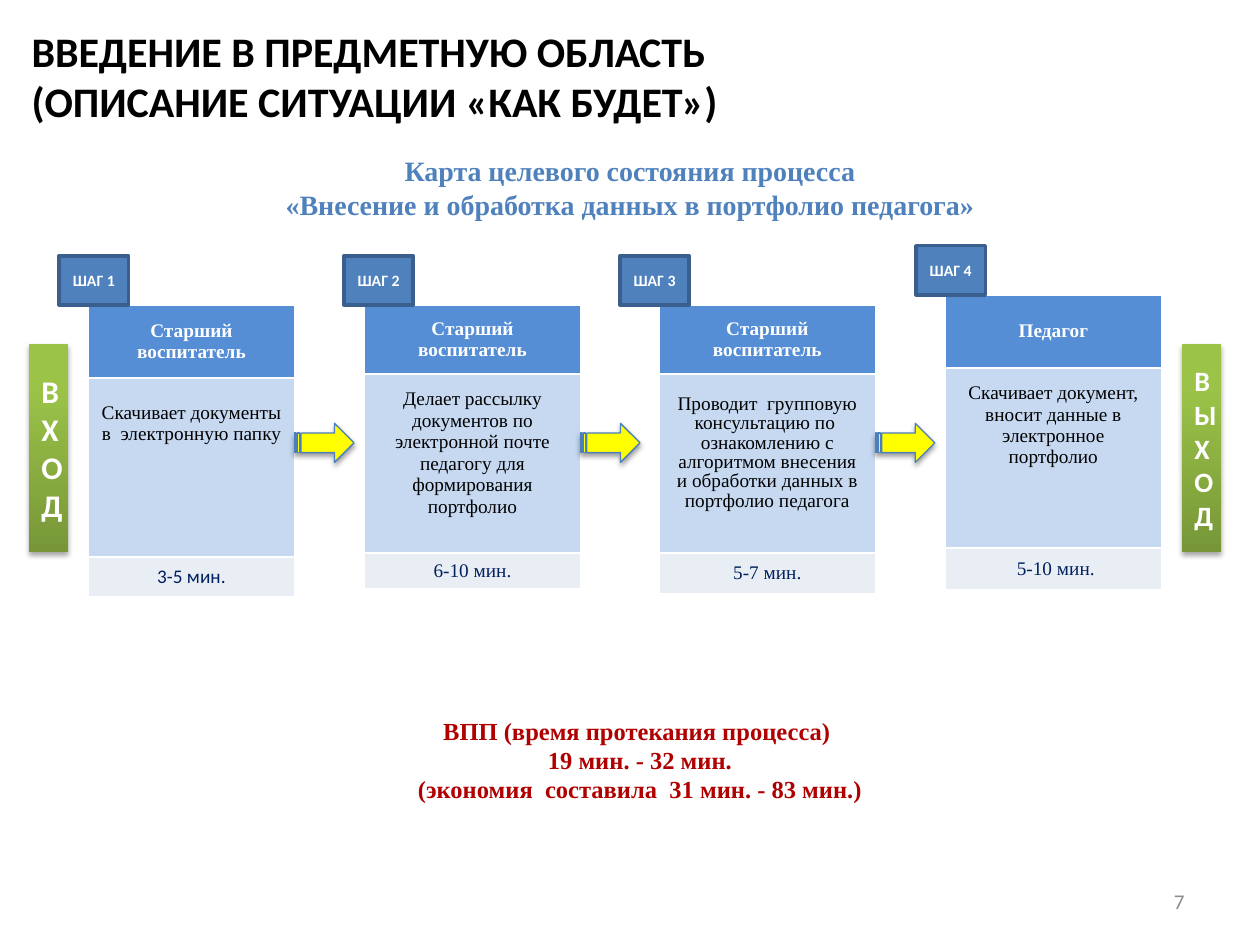
"""Build the slide with the target state map of the teacher portfolio process."""
from lxml import etree
from pptx import Presentation
from pptx.dml.color import RGBColor
from pptx.enum.shapes import MSO_SHAPE as Shape
from pptx.enum.text import MSO_ANCHOR as Anchor, PP_ALIGN as Align
from pptx.oxml.ns import qn
from pptx.util import Inches, Pt

BLACK = RGBColor(0x00, 0x00, 0x00)
WHITE = RGBColor(0xFF, 0xFF, 0xFF)
GREY = RGBColor(0x8C, 0x8C, 0x8C)
BLUE = RGBColor(0x4F, 0x81, 0xBD)
TAG_LINE = RGBColor(0x3A, 0x5F, 0x8C)
HEADER_FILL = RGBColor(0x55, 0x8E, 0xD5)
BODY_FILL = RGBColor(0xC6, 0xD9, 0xF1)
TIME_FILL = RGBColor(0xE9, 0xED, 0xF4)
NAVY = RGBColor(0x00, 0x20, 0x60)
RED = RGBColor(0xB0, 0x00, 0x00)
YELLOW = RGBColor(0xFF, 0xFF, 0x00)
ARROW_LINE = RGBColor(0x4B, 0x7E, 0xBC)
GREEN_DARK = RGBColor(0x77, 0x97, 0x37)
GREEN_LIGHT = RGBColor(0x9B, 0xC3, 0x48)
SANS, SERIF = "Calibri", "Times New Roman"

TITLE = "ВВЕДЕНИЕ В ПРЕДМЕТНУЮ ОБЛАСТЬ\v(ОПИСАНИЕ СИТУАЦИИ «КАК БУДЕТ»)"
SUBTITLE = "Карта целевого состояния процесса\v«Внесение и обработка данных в портфолио педагога»"
SUMMARY = ("ВПП (время протекания процесса) \n19 мин. - 32 мин.\n"
           "(экономия  составила  31 мин. - 83 мин.)")
PAGE_NUMBER = "7"
STEPS = [
    {"role": "Старший воспитатель", "task": "Скачивает документы в  электронную папку",
     "time": "3-5 мин.", "time_font": SANS, "left": 0.7, "top": 2.42, "width": 1.64,
     "tag_left": 0.47, "rows": (0.58, 1.42, 0.32), "bottom": 0.75, "spacing": 1.0},
    {"role": "Старший воспитатель",
     "task": "Делает рассылку документов по электронной почте педагогу для формирования портфолио",
     "time": "6-10 мин.", "time_font": SERIF, "left": 2.89, "top": 2.42, "width": 1.72,
     "tag_left": 2.73, "rows": (0.55, 1.42, 0.28), "bottom": 0.22, "spacing": 1.0},
    {"role": "Старший воспитатель",
     "task": "Проводит  групповую консультацию по  ознакомлению с алгоритмом внесения "
             "и обработки данных в портфолио педагога",
     "time": "5-7 мин.", "time_font": SERIF, "left": 5.23, "top": 2.42, "width": 1.72,
     "tag_left": 4.92, "rows": (0.55, 1.42, 0.32), "bottom": 0.22, "spacing": 0.9},
    {"role": "Педагог", "task": "Скачивает документ, вносит данные в электронное портфолио",
     "time": " 5-10 мин.", "time_font": SERIF, "left": 7.5, "top": 2.34, "width": 1.72,
     "tag_left": 7.27, "rows": (0.58, 1.43, 0.33), "bottom": 0.57, "spacing": 1.0},
]
GATES = [("ВХОД", 0.23, 18), ("ВЫХОД", 9.38, 16)]
TAG_WIDTH, TAG_HEIGHT = 0.55, 0.39


def write(frame, text, size, font, color, bold=True, align=Align.CENTER, spacing=None):
    frame.word_wrap = True
    frame.text = text
    values = {"size": Pt(size), "name": font, "bold": bold}
    for paragraph in frame.paragraphs:
        paragraph.alignment = align
        paragraph.line_spacing = spacing
        for run in paragraph.runs:
            for name, value in values.items():
                setattr(run.font, name, value)
            run.font.color.rgb = color


def add_text(slide, box, text, *style, anchor=Anchor.TOP, **options):
    frame = slide.shapes.add_textbox(*map(Inches, box)).text_frame
    write(frame, text, *style, **options)
    frame.vertical_anchor = anchor


def add_block(slide, kind, box, fill=None, line=None, line_width=1):
    shape = slide.shapes.add_shape(kind, *map(Inches, box))
    shape.shadow.inherit = False
    if fill is not None:
        shape.fill.solid()
        shape.fill.fore_color.rgb = fill
    if line is None:
        shape.line.fill.background()
    else:
        shape.line.color.rgb = line
        shape.line.width = Pt(line_width)
    return shape


def add_shadow(shape, distance, opacity):
    effects = shape._element.spPr.find(qn("a:effectLst"))
    shadow = etree.SubElement(effects, qn("a:outerShdw"), blurRad=str(Pt(3.1)),
                              dist=str(Pt(distance)), dir="5400000", rotWithShape="0")
    color = etree.SubElement(shadow, qn("a:srgbClr"), val="000000")
    etree.SubElement(color, qn("a:alpha"), val=str(opacity * 1000))


def add_step(slide, number, step):
    box = (step["left"], step["top"], step["width"], sum(step["rows"]))
    table = slide.shapes.add_table(3, 1, *map(Inches, box)).table
    table.horz_banding = False
    contents = [
        (step["role"], SERIF, WHITE, True, HEADER_FILL, 0.05, None),
        (step["task"], SERIF, BLACK, False, BODY_FILL, step["bottom"], step["spacing"]),
        (step["time"], step["time_font"], NAVY, False, TIME_FILL, 0.05, None),
    ]
    for row, (text, font, color, bold, fill, bottom, spacing) in enumerate(contents):
        table.rows[row].height = Inches(step["rows"][row])
        cell = table.cell(row, 0)
        cell.fill.solid()
        cell.fill.fore_color.rgb = fill
        cell.vertical_anchor = Anchor.MIDDLE
        cell.margin_bottom = Inches(bottom)
        write(cell.text_frame, text, 11, font, color, bold, spacing=spacing)
    tag_box = (step["tag_left"], step["top"] - TAG_HEIGHT, TAG_WIDTH, TAG_HEIGHT)
    tag = add_block(slide, Shape.RECTANGLE, tag_box, BLUE, TAG_LINE, 2)
    write(tag.text_frame, f"ШАГ {number}", 9, SANS, WHITE)


def add_arrow(slide, left):
    arrow = add_block(slide, Shape.STRIPED_RIGHT_ARROW, (left, 3.36, 0.47, 0.31),
                      YELLOW, ARROW_LINE, 0.75)
    add_shadow(arrow, 1.6, 38)


def add_gate(slide, text, left, size):
    gate = add_block(slide, Shape.RECTANGLE, (left, 2.73, 0.31, 1.65))
    gate.fill.gradient()
    gate.fill.gradient_angle = 90
    for stop, color, position in zip(gate.fill.gradient_stops,
                                     (GREEN_DARK, GREEN_LIGHT), (0, 0.8)):
        stop.color.rgb = color
        stop.position = position
    add_shadow(gate, 1.8, 35)
    write(gate.text_frame, text, size, SANS, WHITE)


def main():
    presentation = Presentation()
    presentation.slide_width, presentation.slide_height = Inches(10), Inches(7.5)
    slide = presentation.slides.add_slide(presentation.slide_layouts[5])

    title = slide.shapes.title
    title.left, title.top, title.width, title.height = map(Inches, (0.15, 0.36, 9.5, 0.92))
    write(title.text_frame, TITLE, 24, SANS, BLACK, align=Align.LEFT)
    title.text_frame.vertical_anchor = Anchor.MIDDLE
    title.text_frame.margin_bottom = Inches(0.49)

    add_text(slide, (0, 1.17, 10, 0.92), SUBTITLE, 16, SERIF, BLUE)
    for number, step in enumerate(STEPS, 1):
        add_step(slide, number, step)
    for step in STEPS[:-1]:
        add_arrow(slide, step["left"] + step["width"])
    for gate in GATES:
        add_gate(slide, *gate)
    add_text(slide, (3.05, 5.63, 4.06, 0.81), SUMMARY, 14, SERIF, RED)
    add_text(slide, (7.17, 6.95, 2.33, 0.4), PAGE_NUMBER, 12, SANS, GREY,
             bold=False, align=Align.RIGHT, anchor=Anchor.MIDDLE)
    presentation.save("out.pptx")


if __name__ == "__main__":
    main()
